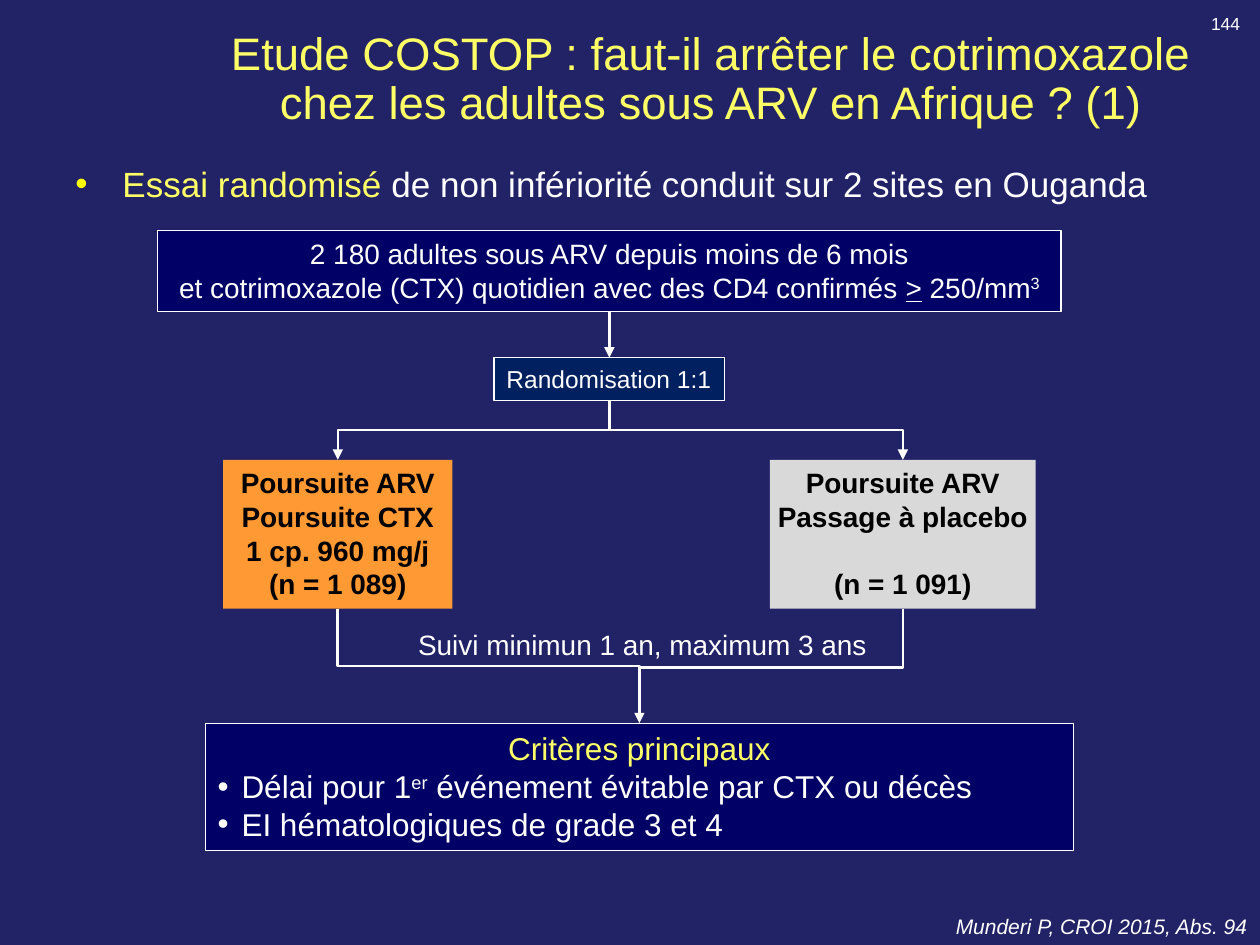
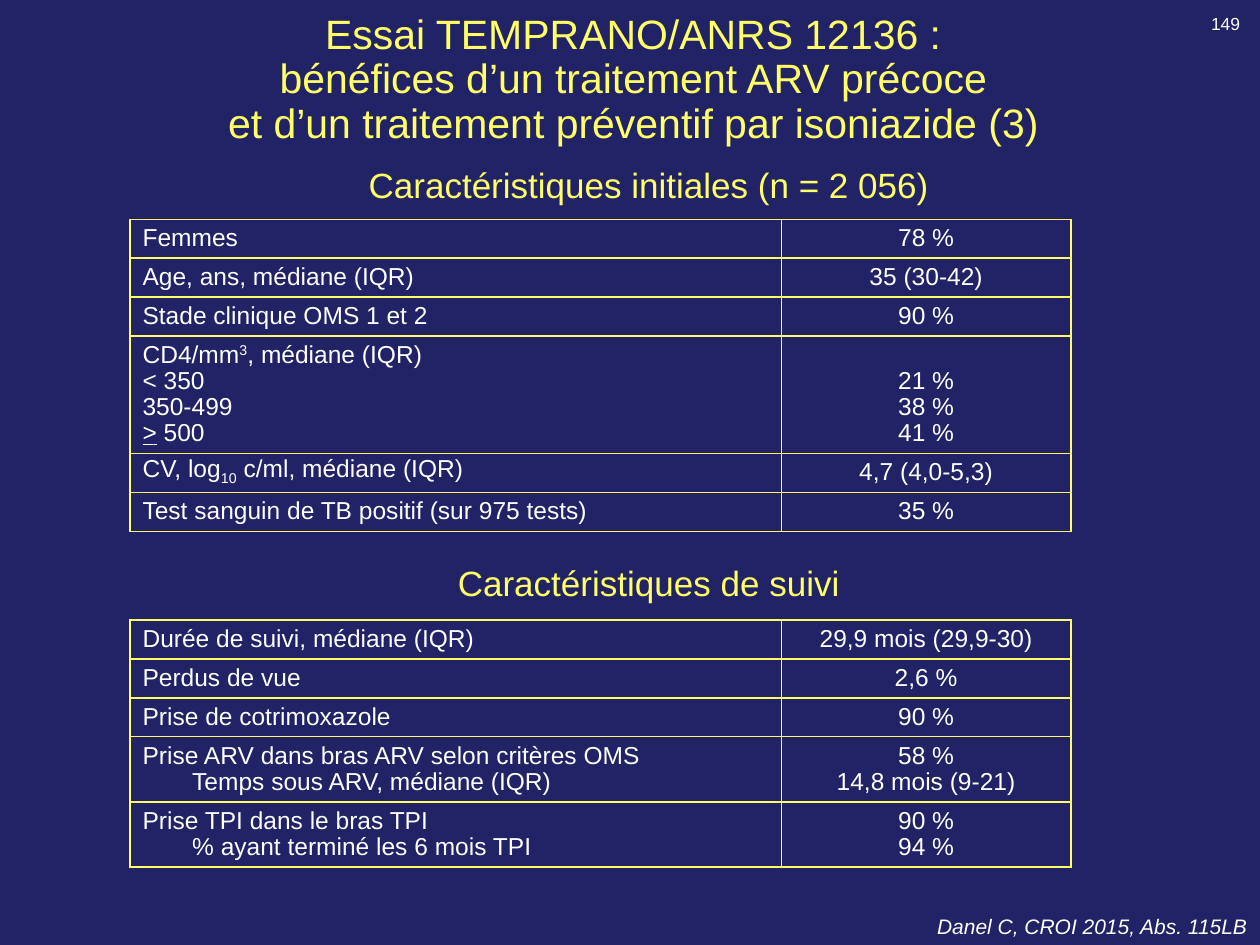
from dataclasses import dataclass
from typing import Optional

from lxml import etree
from pptx import Presentation
from pptx.dml.color import RGBColor
from pptx.enum.shapes import MSO_CONNECTOR, MSO_SHAPE
from pptx.enum.text import MSO_ANCHOR, PP_ALIGN
from pptx.oxml.ns import qn
from pptx.util import Cm, Pt

LEFT, CENTER, RIGHT = PP_ALIGN.LEFT, PP_ALIGN.CENTER, PP_ALIGN.RIGHT
TOP, MIDDLE, BOTTOM = MSO_ANCHOR.TOP, MSO_ANCHOR.MIDDLE, MSO_ANCHOR.BOTTOM
RECTANGLE = MSO_SHAPE.RECTANGLE
STRAIGHT, ELBOW = MSO_CONNECTOR.STRAIGHT, MSO_CONNECTOR.ELBOW

FONT = "Arial"
COLORS = {
    "background": "222267", "yellow": "FFFF66", "bullet": "FFFF00",
    "white": "FFFFFF", "black": "000000", "navy": "000066",
    "blue": "002060", "orange": "FF9933", "grey": "D9D9D9",
}
SLIDE_WIDTH, SLIDE_HEIGHT = 25.4, 19.05


# Descriptions of the repeated elements, lengths in centimetres
@dataclass(frozen=True)
class Run:
    text: str
    color: Optional[str] = None
    underline: bool = False
    baseline: int = 0


@dataclass(frozen=True)
class Line:
    content: str | tuple[Run, ...]
    align: PP_ALIGN = LEFT
    color: Optional[str] = None
    bullet: Optional[str] = None
    hanging: float = 0.48
    indent: float = 0
    space_before: float = 0


@dataclass(frozen=True)
class Style:
    size: float
    color: str = "white"
    bold: bool = False
    italic: bool = False
    shadow: bool = False
    spacing: Optional[float | Pt] = None


@dataclass(frozen=True)
class Box:
    left: float
    top: float
    width: float
    height: float
    fill: Optional[str] = None
    outline: Optional[str] = None
    wrap: bool = True
    anchor: MSO_ANCHOR = TOP

    @property
    def axis(self) -> float:
        return self.left + self.width / 2

    @property
    def bottom(self) -> float:
        return self.top + self.height


@dataclass(frozen=True)
class Link:
    start: tuple[float, float]
    end: tuple[float, float]
    preset: str = "bentConnector3"
    arrow: bool = True


@dataclass(frozen=True)
class Row:
    labels: tuple[Line, ...]
    values: tuple[str, ...]


TITLE = Style(26, "yellow", shadow=True, spacing=0.9)
SMALL_TITLE = Style(23.4, "yellow", shadow=True, spacing=0.9)
BODY = Style(20)
CELL = Style(14, spacing=Pt(15))


def rgb(name: str) -> RGBColor:
    return RGBColor.from_string(COLORS[name])


# Text
def add_bullet(paragraph, color: str, hanging: float) -> None:
    properties = paragraph._p.get_or_add_pPr()
    properties.set("marL", str(Cm(hanging)))
    properties.set("indent", str(-Cm(hanging)))
    bullet_color = etree.SubElement(properties, qn("a:buClr"))
    etree.SubElement(bullet_color, qn("a:srgbClr"), val=COLORS[color])
    etree.SubElement(properties, qn("a:buFont"), typeface=FONT)
    etree.SubElement(properties, qn("a:buChar"), char="•")


def add_text_shadow(run) -> None:
    effects = etree.Element(qn("a:effectLst"))
    shadow = etree.SubElement(effects, qn("a:outerShdw"), dist="38100",
                              dir="2700000", algn="tl")
    etree.SubElement(shadow, qn("a:srgbClr"), val=COLORS["black"])
    run._r.get_or_add_rPr().find(qn("a:solidFill")).addnext(effects)


def write_lines(text_frame, lines: tuple[Line, ...], style: Style) -> None:
    for index, line in enumerate(lines):
        paragraph = text_frame.add_paragraph() if index else text_frame.paragraphs[0]
        paragraph.alignment = line.align
        paragraph.space_before = Pt(line.space_before)
        if style.spacing:
            paragraph.line_spacing = style.spacing
        if line.bullet:
            add_bullet(paragraph, line.bullet, line.hanging)
        elif line.indent:
            paragraph._p.get_or_add_pPr().set("marL", str(Cm(line.indent)))
        content = (Run(line.content),) if isinstance(line.content, str) else line.content
        for part in content:
            run = paragraph.add_run()
            run.text = part.text
            font = run.font
            font.name, font.size = FONT, Pt(style.size)
            font.bold, font.italic = style.bold, style.italic
            font.color.rgb = rgb(part.color or line.color or style.color)
            if part.underline:
                font.underline = True
            if part.baseline:
                run._r.get_or_add_rPr().set("baseline", str(part.baseline * 1000))
            if style.shadow:
                add_text_shadow(run)


def draw_box(slide, box: Box, lines: tuple[Line, ...], style: Style) -> None:
    frame = [Cm(value) for value in (box.left, box.top, box.width, box.height)]
    if box.fill:
        shape = slide.shapes.add_shape(RECTANGLE, *frame)
        shape.shadow.inherit = False
        shape.fill.solid()
        shape.fill.fore_color.rgb = rgb(box.fill)
        if box.outline:
            shape.line.color.rgb = rgb(box.outline)
            shape.line.width = Pt(0.75)
        else:
            shape.line.fill.background()
    else:
        shape = slide.shapes.add_textbox(*frame)
    shape.text_frame.word_wrap = box.wrap
    shape.text_frame.vertical_anchor = box.anchor
    write_lines(shape.text_frame, lines, style)


# Connectors: elbows leave their start vertically, so their frame is turned
def draw_link(slide, link: Link) -> None:
    (x1, y1), (x2, y2) = link.start, link.end
    if x1 == x2:
        connector = slide.shapes.add_connector(STRAIGHT, Cm(x1), Cm(y1), Cm(x2), Cm(y2))
    else:
        width, height = y2 - y1, abs(x2 - x1)
        left, top = (x1 + x2 - width) / 2, (y1 + y2 - height) / 2
        connector = slide.shapes.add_connector(
            ELBOW, Cm(left), Cm(top), Cm(left + width), Cm(top + height))
        properties = connector.element.spPr
        transform = properties.find(qn("a:xfrm"))
        transform.set("rot", str((90 if x2 < x1 else 270) * 60000))
        if x2 > x1:
            transform.set("flipH", "1")
        properties.find(qn("a:prstGeom")).set("prst", link.preset)
    connector.line.color.rgb = rgb("white")
    connector.line.width = Pt(1.5)
    properties = connector.element.spPr
    if link.arrow:
        etree.SubElement(properties.find(qn("a:ln")), qn("a:tailEnd"), type="triangle")
    etree.SubElement(properties, qn("a:effectLst"))


# Tables
def format_cell(cell, lines: tuple[Line, ...], anchor: MSO_ANCHOR) -> None:
    cell.fill.background()
    cell.vertical_anchor = anchor
    write_lines(cell.text_frame, lines, CELL)
    properties = cell._tc.get_or_add_tcPr()
    for index, side in enumerate(("lnL", "lnR", "lnT", "lnB")):
        border = etree.Element(qn(f"a:{side}"), w=str(Pt(1)))
        fill = etree.SubElement(border, qn("a:solidFill"))
        etree.SubElement(fill, qn("a:srgbClr"), val=COLORS["yellow"])
        properties.insert(index, border)


def draw_table(slide, top: float, rows: tuple[Row, ...]) -> None:
    widths = (13.13, 5.84)
    heights = [0.53 * len(row.labels) + 0.25 for row in rows]
    table = slide.shapes.add_table(len(rows), 2, Cm(2.62), Cm(top),
                                   Cm(sum(widths)), Cm(sum(heights))).table
    table.first_row = table.horz_banding = False
    for column, width in zip(table.columns, widths):
        column.width = Cm(width)
    for index, (row, height) in enumerate(zip(rows, heights)):
        table.rows[index].height = Cm(height)
        format_cell(table.cell(index, 0), row.labels, MIDDLE)
        values = tuple(Line(value, CENTER) for value in row.values)
        format_cell(table.cell(index, 1), values, BOTTOM)


# Background, title, source and number shared by the slides
def add_base_slide(presentation, title: tuple[str, ...], left: float, style: Style,
                   source: str, number: str):
    slide = presentation.slides.add_slide(presentation.slide_layouts[6])
    slide.background.fill.solid()
    slide.background.fill.fore_color.rgb = rgb("background")
    title_box = Box(left, 0.33, 24.79 - left, 2.59, anchor=MIDDLE)
    draw_box(slide, title_box, tuple(Line(text, CENTER) for text in title), style)
    draw_box(slide, Box(SLIDE_WIDTH - 9, 18.29, 9, 0.76), (Line(source, RIGHT),),
             Style(12, italic=True))
    draw_box(slide, Box(24.15, 0.13, 1.1, 0.68, wrap=False), (Line(number, RIGHT),),
             Style(10))
    return slide


def build_trial_design(presentation) -> None:
    slide = add_base_slide(
        presentation,
        ("Etude COSTOP : faut-il arrêter le cotrimoxazole "
         "chez les adultes sous ARV en Afrique ? (1)",),
        3.89, TITLE, "Munderi P, CROI 2015, Abs. 94", "144")
    draw_box(slide, Box(1.27, 3.15, 23.62, 1.1), (
        Line((Run("Essai randomisé ", "yellow"),
              Run("de non infériorité conduit sur 2 sites en Ouganda")),
             bullet="bullet", hanging=0.95),), BODY)

    # Flow chart boxes
    population = Box(3.18, 4.65, 18.21, 1.63, "navy", "white", False)
    randomisation = Box(9.96, 7.21, 4.65, 0.86, "blue", "white", False)
    continued = Box(4.5, 9.27, 4.62, 3, "orange", wrap=False)
    placebo = Box(15.52, 9.27, 5.36, 3, "grey", wrap=False)
    criteria = Box(4.14, 14.58, 17.5, 2.57, "navy", "white")
    arm_style = Style(16, "black", bold=True)
    draw_box(slide, population, (
        Line("2 180 adultes sous ARV depuis moins de 6 mois", CENTER),
        Line((Run("et cotrimoxazole (CTX) quotidien avec des CD4 confirmés "),
              Run(">", underline=True), Run(" 250/mm"), Run("3", baseline=30)), CENTER),
    ), Style(16))
    draw_box(slide, randomisation, (Line("Randomisation 1:1"),), Style(14))
    draw_box(slide, continued, tuple(Line(text, CENTER) for text in (
        "Poursuite ARV", "Poursuite CTX", "1 cp. 960 mg/j", "(n = 1 089)")), arm_style)
    draw_box(slide, placebo, (
        Line("Poursuite ARV", CENTER), Line("Passage à placebo", CENTER),
        Line("(n = 1 091)", CENTER, space_before=19)), arm_style)
    draw_box(slide, criteria, (
        Line("Critères principaux", CENTER, "yellow"),
        Line((Run("Délai pour 1"), Run("er", baseline=30),
              Run(" événement évitable par CTX ou décès")), bullet="white"),
        Line("EI hématologiques de grade 3 et 4", bullet="white"),
    ), Style(18))
    draw_box(slide, Box(8.18, 12.52, 9.68, 0.94, wrap=False),
             (Line("Suivi minimun 1 an, maximum 3 ans"),), Style(16))

    # Flow chart links
    split = (population.axis, randomisation.bottom)
    for link in (
        Link((population.axis, population.bottom), (population.axis, randomisation.top)),
        Link(split, (continued.axis, continued.top)),
        Link(split, (placebo.axis, placebo.top)),
        Link((continued.axis, continued.bottom), (criteria.axis, criteria.top)),
        Link((placebo.axis, placebo.bottom), (criteria.axis, 13.46),
             "bentConnector2", arrow=False),
    ):
        draw_link(slide, link)


def build_characteristics(presentation) -> None:
    slide = add_base_slide(
        presentation,
        ("Essai TEMPRANO/ANRS 12136 :", "bénéfices d’un traitement ARV précoce",
         "et d’un traitement préventif par isoniazide (3)"),
        0.74, SMALL_TITLE, "Danel C, CROI 2015, Abs. 115LB", "149")
    baseline_rows = (
        Row((Line("Femmes"),), ("78 %",)),
        Row((Line("Age, ans, médiane (IQR)"),), ("35 (30-42)",)),
        Row((Line("Stade clinique OMS 1 et 2"),), ("90 %",)),
        Row((Line((Run("CD4/mm"), Run("3", baseline=30), Run(", médiane (IQR)"))),
             Line("< 350"), Line("350-499"),
             Line((Run(">", underline=True), Run(" 500")))), ("21 %", "38 %", "41 %")),
        Row((Line((Run("CV, log"), Run("10", baseline=-25),
                   Run(" c/ml, médiane (IQR)"))),), ("4,7 (4,0-5,3)",)),
        Row((Line("Test sanguin de TB positif (sur 975 tests)"),), ("35 %",)),
    )
    follow_up_rows = (
        Row((Line("Durée de suivi, médiane (IQR)"),), ("29,9 mois (29,9-30)",)),
        Row((Line("Perdus de vue"),), ("2,6 %",)),
        Row((Line("Prise de cotrimoxazole"),), ("90 %",)),
        Row((Line("Prise ARV dans bras ARV selon critères OMS"),
             Line("Temps sous ARV, médiane (IQR)", indent=1)),
            ("58 %", "14,8 mois (9-21)")),
        Row((Line("Prise TPI dans le bras TPI"),
             Line("% ayant terminé les 6 mois TPI", indent=1)), ("90 %", "94 %")),
    )
    for heading, heading_top, table_top, rows in (
        ("Caractéristiques initiales (n = 2 056)", 3.18, 4.42, baseline_rows),
        ("Caractéristiques de suivi", 11.2, 12.5, follow_up_rows),
    ):
        draw_box(slide, Box(1.27, heading_top, 23.62, 1.1),
                 (Line(heading, CENTER, "yellow"),), BODY)
        draw_table(slide, table_top, rows)


def main() -> None:
    presentation = Presentation()
    presentation.slide_width, presentation.slide_height = Cm(SLIDE_WIDTH), Cm(SLIDE_HEIGHT)
    build_trial_design(presentation)
    build_characteristics(presentation)
    presentation.save("out.pptx")


if __name__ == "__main__":
    main()
